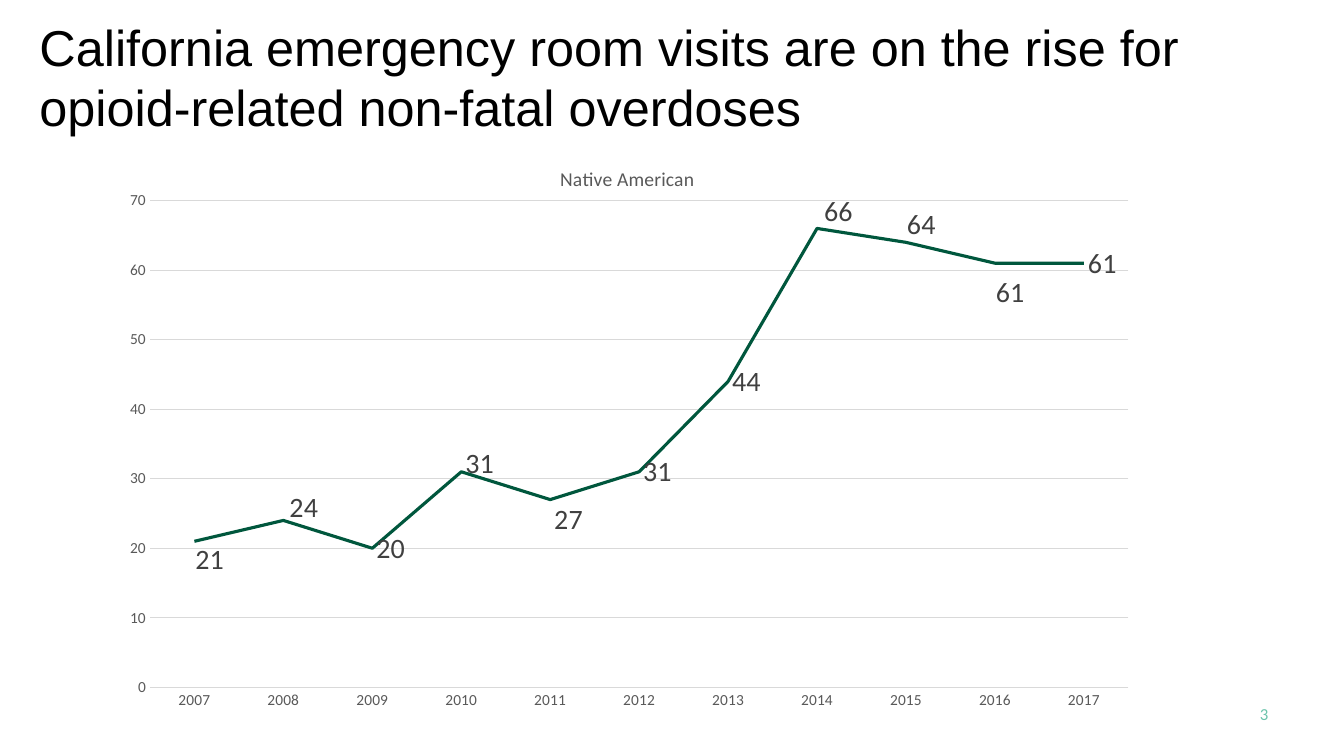
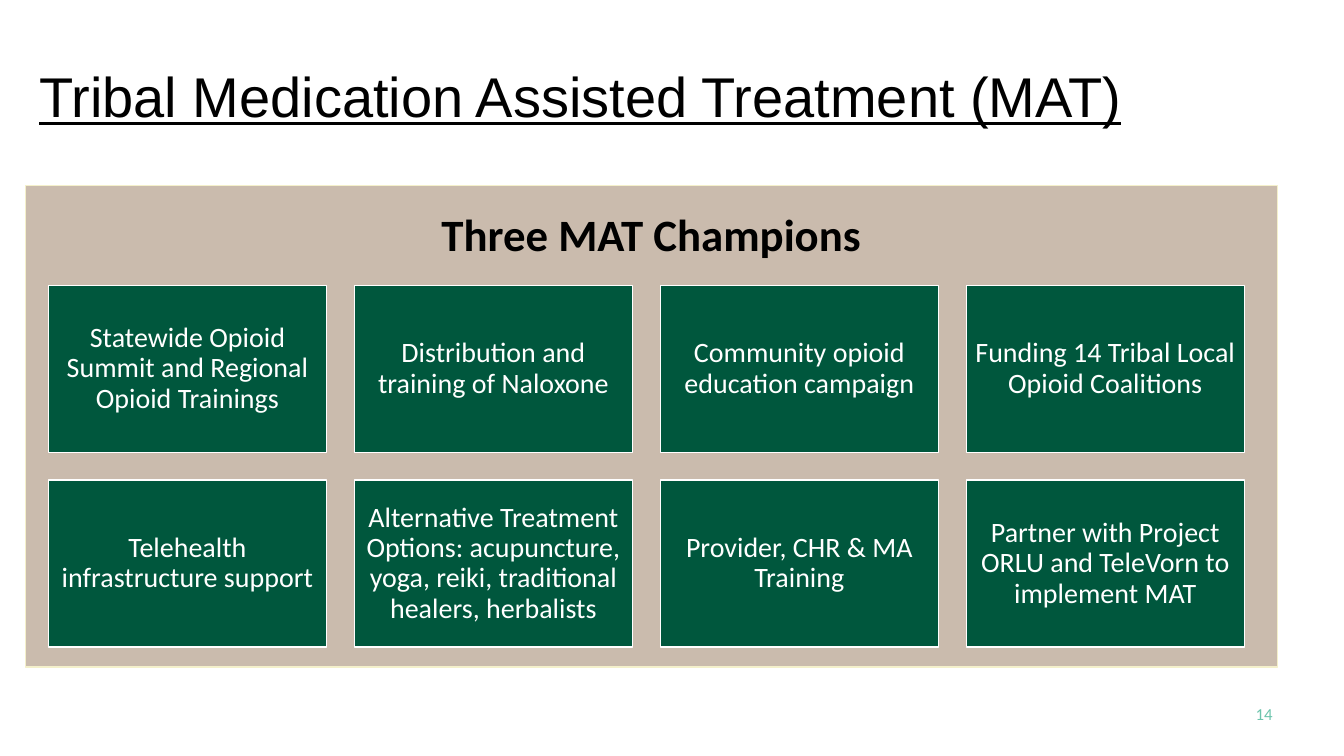
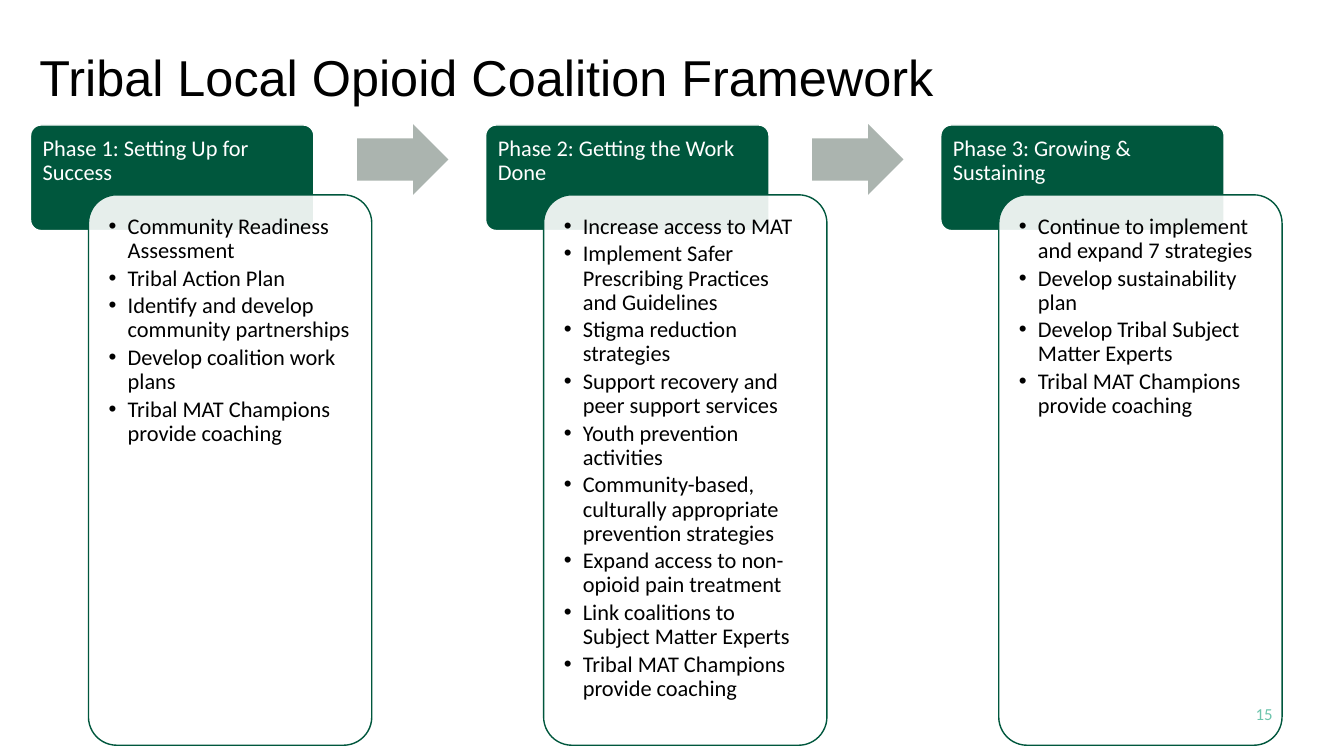
from lxml.etree import SubElement
from pptx import Presentation
from pptx.chart.data import CategoryChartData
from pptx.dml.color import RGBColor
from pptx.enum.chart import XL_CHART_TYPE, XL_LABEL_POSITION, XL_MARKER_STYLE, XL_TICK_MARK
from pptx.enum.shapes import MSO_SHAPE
from pptx.enum.text import MSO_ANCHOR, MSO_AUTO_SIZE, PP_ALIGN
from pptx.oxml import parse_xml
from pptx.oxml.ns import nsdecls, qn
from pptx.util import Cm, Pt

COLOURS = {
    "green": "00573D", "mint": "6CC4AC", "sand": "CABBAD", "cream": "F4F0CB",
    "arrow": "ABB4AF", "white": "FFFFFF", "black": "000000",
    "axis text": "595959", "label text": "404040", "grid": "D9D9D9",
}
BODY_FONT = "Calibri"
TITLE_FORMAT = {"name": "Arial", "size": Pt(36)}
FRAME_FORMAT = {"word_wrap": True, "auto_size": MSO_AUTO_SIZE.NONE}

VISITS = {
    "2007": 21, "2008": 24, "2009": 20, "2010": 31, "2011": 27, "2012": 31,
    "2013": 44, "2014": 66, "2015": 64, "2016": 61, "2017": 61,
}
# Label shifts by point, as fractions of the chart's width and height
LABEL_SHIFTS = {
    0: (-0.003, 0.031), 1: (0.002, -0.023), 3: (0, -0.014), 4: (0, 0.035),
    7: (0.003, -0.029), 8: (-0.003, -0.031), 9: (-0.003, 0.05),
}
ACTIVITIES = [
    "Statewide Opioid Summit and Regional Opioid Trainings",
    "Distribution and training of Naloxone",
    "Community opioid education campaign",
    "Funding 14 Tribal Local Opioid Coalitions",
    "Telehealth infrastructure support",
    "Alternative Treatment Options: acupuncture, yoga, reiki, traditional healers, herbalists",
    "Provider, CHR & MA Training",
    "Partner with Project ORLU and TeleVorn to implement MAT",
]
PHASES = {
    "Phase 1: Setting Up for Success": [
        "Community Readiness Assessment",
        "Tribal Action Plan",
        "Identify and develop community partnerships",
        "Develop coalition work plans",
        "Tribal MAT Champions provide coaching",
    ],
    "Phase 2: Getting the Work Done": [
        "Increase access to MAT",
        "Implement Safer Prescribing Practices and Guidelines",
        "Stigma reduction strategies",
        "Support recovery and peer support services",
        "Youth prevention activities",
        "Community-based, culturally appropriate prevention strategies",
        "Expand access to non-opioid pain treatment",
        "Link coalitions to Subject Matter Experts",
        "Tribal MAT Champions provide coaching",
    ],
    "Phase 3: Growing & Sustaining": [
        "Continue to implement and expand 7 strategies",
        "Develop sustainability plan",
        "Develop Tribal Subject Matter Experts",
        "Tribal MAT Champions provide coaching",
    ],
}


# Shared formatting
def apply(target, values):
    for name, value in values.items():
        setattr(target, name, value)


def rgb(colour):
    return RGBColor.from_string(COLOURS[colour])


def style_font(font, colour, size, **values):
    apply(font, {"name": BODY_FONT, "size": Pt(size), "bold": False, **values})
    font.color.rgb = rgb(colour)


def add_bullet(para, indent):
    properties = para._p.get_or_add_pPr()
    properties.set("marL", str(indent))
    properties.set("indent", str(-indent))
    SubElement(properties, qn("a:buFont")).set("typeface", "Arial")
    SubElement(properties, qn("a:buChar")).set("char", "•")


def write(shape, lines, colour, size, inset=0.0, anchor=MSO_ANCHOR.MIDDLE,
          align=PP_ALIGN.CENTER, spacing=0.9, bullets=False, **font_values):
    frame = shape.text_frame
    margins = {f"margin_{side}": Cm(inset) for side in ("left", "top", "right", "bottom")}
    apply(frame, {**FRAME_FORMAT, **margins, "vertical_anchor": anchor})
    for index, line in enumerate(lines):
        para = frame.paragraphs[0] if index == 0 else frame.add_paragraph()
        apply(para, {"alignment": align, "line_spacing": spacing})
        if bullets:
            para.space_after = Pt(2.4)
            add_bullet(para, Cm(0.48))
        span = para.add_run()
        span.text = line
        style_font(span.font, colour, size, **font_values)


def add_block(page, kind, box, fill, line=None, adjustments=()):
    shape = page.shapes.add_shape(kind, *map(Cm, box))
    shape.shadow.inherit = False
    shape.fill.solid()
    shape.fill.fore_color.rgb = rgb(fill)
    if line:
        shape.line.color.rgb = rgb(line)
        shape.line.width = Pt(1)
    else:
        shape.line.fill.background()
    for index, value in enumerate(adjustments):
        shape.adjustments[index] = value
    return shape


def add_textbox(page, box, lines, colour, size, **values):
    write(page.shapes.add_textbox(*map(Cm, box)), lines, colour, size, **values)


def add_page(deck, title, height=1.91, **title_values):
    page = deck.slides.add_slide(deck.slide_layouts[5])
    shape = page.shapes.title
    apply(shape, {"left": Cm(0.74), "top": Cm(0.97), "width": Cm(32.05), "height": Cm(height)})
    frame = shape.text_frame
    frame.text = title
    apply(frame, {**FRAME_FORMAT, "vertical_anchor": MSO_ANCHOR.MIDDLE})
    para = frame.paragraphs[0]
    para.alignment = PP_ALIGN.LEFT
    font = para.runs[0].font
    apply(font, {**TITLE_FORMAT, **title_values})
    font.color.rgb = rgb("black")
    return page


def add_page_number(page, number):
    add_textbox(page, (30.91, 17.78, 1.9, 0.43), [str(number)], "mint", 12, spacing=1.0)


# Line chart
def set_layout(parent, index, x, y, size=None):
    inner = '<c:layoutTarget val="inner"/><c:xMode val="edge"/><c:yMode val="edge"/>' if size else ""
    extent = f'<c:w val="{size[0]}"/><c:h val="{size[1]}"/>' if size else ""
    for old in parent.findall(qn("c:layout")):
        parent.remove(old)
    parent.insert(index, parse_xml(
        f'<c:layout {nsdecls("c")}><c:manualLayout>{inner}'
        f'<c:x val="{x}"/><c:y val="{y}"/>{extent}</c:manualLayout></c:layout>'))


def style_axes(chart):
    for axis in (chart.category_axis, chart.value_axis):
        apply(axis, {"major_tick_mark": XL_TICK_MARK.NONE, "minor_tick_mark": XL_TICK_MARK.NONE})
        style_font(axis.tick_labels.font, "axis text", 11)
    chart.value_axis.format.line.fill.background()
    apply(chart.value_axis, {"minimum_scale": 0, "maximum_scale": 70, "major_unit": 10,
                             "has_major_gridlines": True})
    for line in (chart.category_axis.format.line, chart.value_axis.major_gridlines.format.line):
        line.color.rgb = rgb("grid")
        line.width = Pt(0.75)


def style_labels(series):
    labels = series.data_labels
    apply(labels, {"show_value": True, "position": XL_LABEL_POSITION.RIGHT})
    style_font(labels.font, "label text", 20)
    for index in LABEL_SHIFTS:
        label = series.points[index].data_label
        label.position = XL_LABEL_POSITION.RIGHT
        style_font(label.font, "label text", 20)
    for element in series._element.iter(qn("c:dLbl")):
        index = int(element.find(qn("c:idx")).get("val"))
        set_layout(element, 1, *LABEL_SHIFTS[index])


def add_visits_chart(page, box):
    data = CategoryChartData()
    data.categories = list(VISITS)
    data.add_series("Native American", list(VISITS.values()))
    chart = page.shapes.add_chart(XL_CHART_TYPE.LINE, *map(Cm, box), data).chart
    style_font(chart.font, "black", 10)
    apply(chart, {"has_legend": False, "has_title": True})
    chart.chart_title.include_in_layout = False
    para = chart.chart_title.text_frame.paragraphs[0]
    span = para.add_run()
    span.text = "Native American"
    style_font(span.font, "axis text", 14)

    plot = chart.plots[0]
    plot.vary_by_categories = False
    series = plot.series[0]
    series.smooth = False
    series.marker.style = XL_MARKER_STYLE.NONE
    series.format.line.color.rgb = rgb("green")
    series.format.line.width = Pt(2.25)
    style_axes(chart)
    style_labels(series)
    area = chart._chartSpace.find(".//" + qn("c:plotArea"))
    set_layout(area, 0, 0.038, 0.096, (0.947, 0.843))


# Panel with a heading and a grid of tiles
def add_champions_panel(page, box):
    left, top, width, _ = box
    add_block(page, MSO_SHAPE.RECTANGLE, box, "sand", "cream")
    add_textbox(page, (left, top + 0.41, width, 1.63), ["Three MAT Champions"], "black", 32,
                inset=0.13, anchor=MSO_ANCHOR.TOP, spacing=1.0, bold=True)
    columns, tile_width, tile_height, gap = 4, 7.01, 4.21, 0.7
    for index, activity in enumerate(ACTIVITIES):
        row, column = divmod(index, columns)
        tile_box = (left + 0.58 + column * (tile_width + gap),
                    top + 2.52 + row * (tile_height + gap), tile_width, tile_height)
        tile = add_block(page, MSO_SHAPE.RECTANGLE, tile_box, "green", "white")
        write(tile, [activity], "white", 20, inset=0.2)


# One phase: header with a card overlapping it
def add_phase(page, left, top, heading, steps):
    width = 7.14
    header = add_block(page, MSO_SHAPE.ROUNDED_RECTANGLE, (left, top, width, 2.66),
                       "green", "white", [0.1])
    card = add_block(page, MSO_SHAPE.ROUNDED_RECTANGLE, (left + 1.46, top + 1.76, width, 13.87),
                     "white", "green", [0.1])
    alpha = SubElement(card.fill._xPr.find(".//" + qn("a:srgbClr")), qn("a:alpha"))
    alpha.set("val", "90000")
    text_format = {"anchor": MSO_ANCHOR.TOP, "align": PP_ALIGN.LEFT}
    write(header, [heading], "white", 16, inset=0.23, **text_format)
    write(card, steps, "black", 16, inset=0.3, bullets=True, **text_format)


def add_framework(page, left, top):
    pitch = 11.47
    for index, (heading, steps) in enumerate(PHASES.items()):
        phase_left = left + index * pitch
        add_phase(page, phase_left, top, heading, steps)
        if index < len(PHASES) - 1:
            add_block(page, MSO_SHAPE.RIGHT_ARROW, (phase_left + 8.23, top - 0.02, 2.3, 1.78),
                      "arrow", adjustments=[0.6, 0.5])


def main():
    deck = Presentation()
    apply(deck, {"slide_width": Cm(33.87), "slide_height": Cm(19.05)})

    page = add_page(deck, "California emergency room visits are on the rise for "
                          "opioid-related non-fatal overdoses")
    add_visits_chart(page, (2.79, 3.66, 26.04, 14.55))
    add_page_number(page, 3)

    page = add_page(deck, "Tribal Medication Assisted Treatment (MAT)", height=2.87,
                    size=Pt(40), underline=True)
    add_champions_panel(page, (0.64, 4.67, 31.55, 12.14))
    add_page_number(page, 14)

    page = add_page(deck, "Tribal Local Opioid Coalition Framework")
    add_framework(page, 0.77, 3.15)
    add_page_number(page, 15)

    deck.save("out.pptx")


if __name__ == "__main__":
    main()
